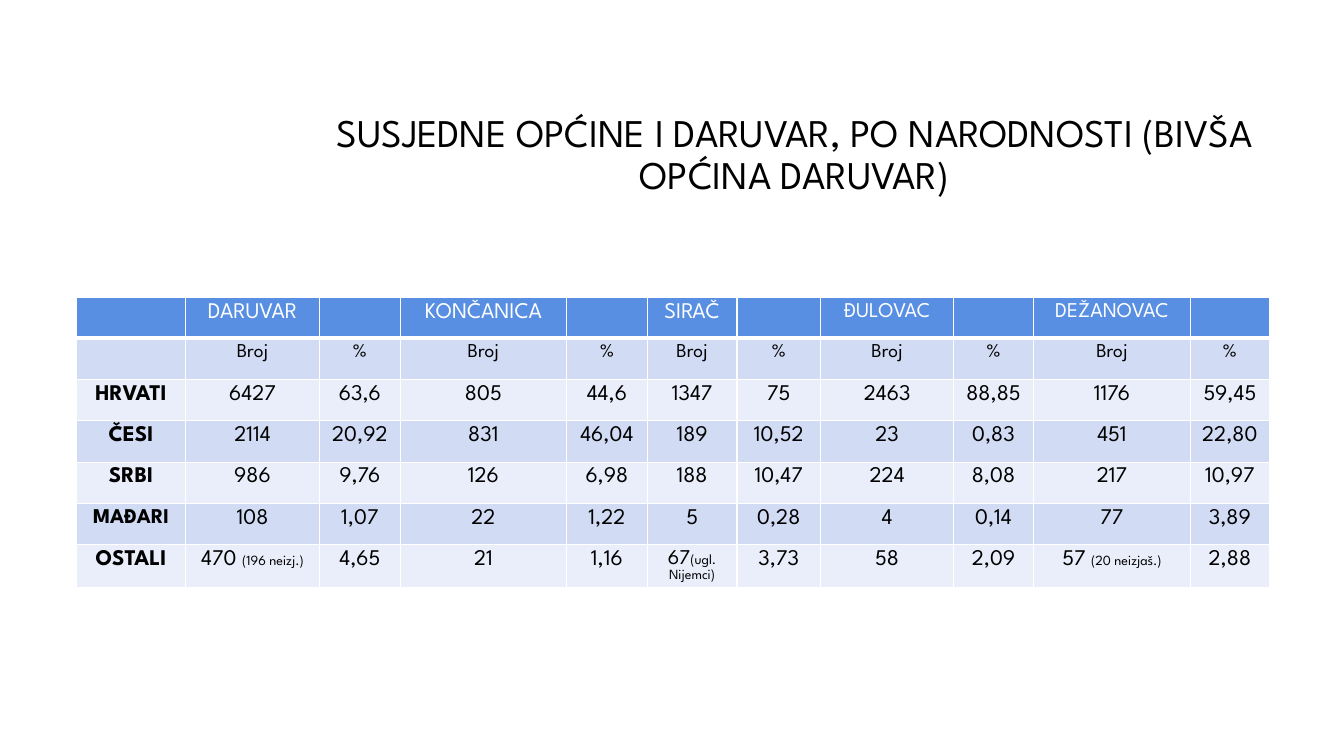
import lxml.etree
import pptx
import pptx.dml.color
import pptx.enum.text
import pptx.oxml.ns
import pptx.util

Inches = pptx.util.Inches
FONT = "League Spartan"
BLACK, WHITE = "000000", "FFFFFF"
HEADER_FILL, DARK_BAND, LIGHT_BAND = "588FE2", "D1DBF4", "EAEEFA"
COLUMN_WIDTHS = [1.08, 1.33, 0.8, 1.65, 0.8, 0.89, 0.83, 1.32, 0.79, 1.56, 0.78]
ROW_HEIGHTS = [0.34] + [0.41] * 6
TITLE = "SUSJEDNE OPĆINE I DARUVAR, PO NARODNOSTI (BIVŠA OPĆINA DARUVAR)"
ROWS = [
    ["", "DARUVAR", "", "KONČANICA", "", "SIRAČ", "", "ĐULOVAC", "", "DEŽANOVAC", ""],
    [""] + ["Broj", "%"] * 5,
    ["HRVATI", "6427", "63,6", "805", "44,6", "1347", "75", "2463", "88,85", "1176", "59,45"],
    ["ČESI", "2114", "20,92", "831", "46,04", "189", "10,52", "23", "0,83", "451", "22,80"],
    ["SRBI", "986", "9,76", "126", "6,98", "188", "10,47", "224", "8,08", "217", "10,97"],
    ["MAĐARI", "108", "1,07", "22", "1,22", "5", "0,28", "4", "0,14", "77", "3,89"],
    ["OSTALI", "470 ", "4,65", "21", "1,16", "67", "3,73", "58", "2,09", "57 ", "2,88"],
]
NOTES = {"470 ": "(196 neizj.)", "67": "(ugl. Nijemci)", "57 ": "(20 neizjaš.)"}
SMALLER_TEXTS = {"ĐULOVAC", "DEŽANOVAC", "MAĐARI", "67"}


def rgb(color):
    """Turn a hex string into a colour."""
    return pptx.dml.color.RGBColor.from_string(color)


def format_font(font, size, color, bold=False):
    """Give a font its face, size, colour and weight."""
    font.name = FONT
    font.size = pptx.util.Pt(size)
    font.bold = bold
    font.color.rgb = rgb(color)


def add_title(page):
    """Place the title text in the title placeholder."""
    title = page.shapes.title
    title.left, title.top = Inches(3.17), Inches(0.84)
    title.width, title.height = Inches(9.42), Inches(1.41)
    frame = title.text_frame
    frame.text = TITLE
    frame.word_wrap = True
    frame.auto_size = pptx.enum.text.MSO_AUTO_SIZE.NONE
    frame.vertical_anchor = pptx.enum.text.MSO_ANCHOR.MIDDLE
    para = frame.paragraphs[0]
    para.alignment = pptx.enum.text.PP_ALIGN.CENTER
    para.line_spacing = 0.9
    format_font(para.runs[0].font, 28, BLACK)


def add_borders(cell, bottom_width):
    """Draw white borders around a cell."""
    properties = cell._tc.get_or_add_tcPr()
    for side, width in (("L", 1), ("R", 1), ("T", 1), ("B", bottom_width)):
        line = lxml.etree.SubElement(properties, pptx.oxml.ns.qn(f"a:ln{side}"))
        line.set("w", str(pptx.util.Pt(width)))
        fill = lxml.etree.SubElement(line, pptx.oxml.ns.qn("a:solidFill"))
        color = lxml.etree.SubElement(fill, pptx.oxml.ns.qn("a:srgbClr"))
        color.set("val", WHITE)


def fill_cell(cell, text, row, column):
    """Write and format one table cell."""
    add_borders(cell, 3 if row == 0 else 1)
    cell.fill.solid()
    band = LIGHT_BAND if row % 2 == 0 else DARK_BAND
    cell.fill.fore_color.rgb = rgb(HEADER_FILL if row == 0 else band)
    para = cell.text_frame.paragraphs[0]
    para.alignment = pptx.enum.text.PP_ALIGN.CENTER
    if not text:
        return
    para.text = text
    size = 14 if row == 1 else 15 if text in SMALLER_TEXTS else 16
    format_font(para.runs[0].font, size, WHITE if row == 0 else BLACK, column == 0)
    if text in NOTES:
        note = para.add_run()
        note.text = NOTES[text]
        format_font(note.font, 10, BLACK)


def add_population_table(page):
    """Add the table of population by municipality and nationality."""
    table = page.shapes.add_table(
        len(ROWS), len(COLUMN_WIDTHS), Inches(0.76), Inches(2.95),
        Inches(sum(COLUMN_WIDTHS)), Inches(sum(ROW_HEIGHTS))).table
    for column, width in zip(table.columns, COLUMN_WIDTHS):
        column.width = Inches(width)
    for row, height in zip(table.rows, ROW_HEIGHTS):
        row.height = Inches(height)
    for row, texts in enumerate(ROWS):
        for column, text in enumerate(texts):
            fill_cell(table.cell(row, column), text, row, column)


def main():
    """Build the slide and save the deck."""
    deck = pptx.Presentation()
    deck.slide_width, deck.slide_height = Inches(13.33), Inches(7.5)
    page = deck.slides.add_slide(deck.slide_layouts[5])
    page.background.fill.solid()
    page.background.fill.fore_color.rgb = rgb(WHITE)
    add_title(page)
    add_population_table(page)
    deck.save("out.pptx")


if __name__ == "__main__":
    main()
